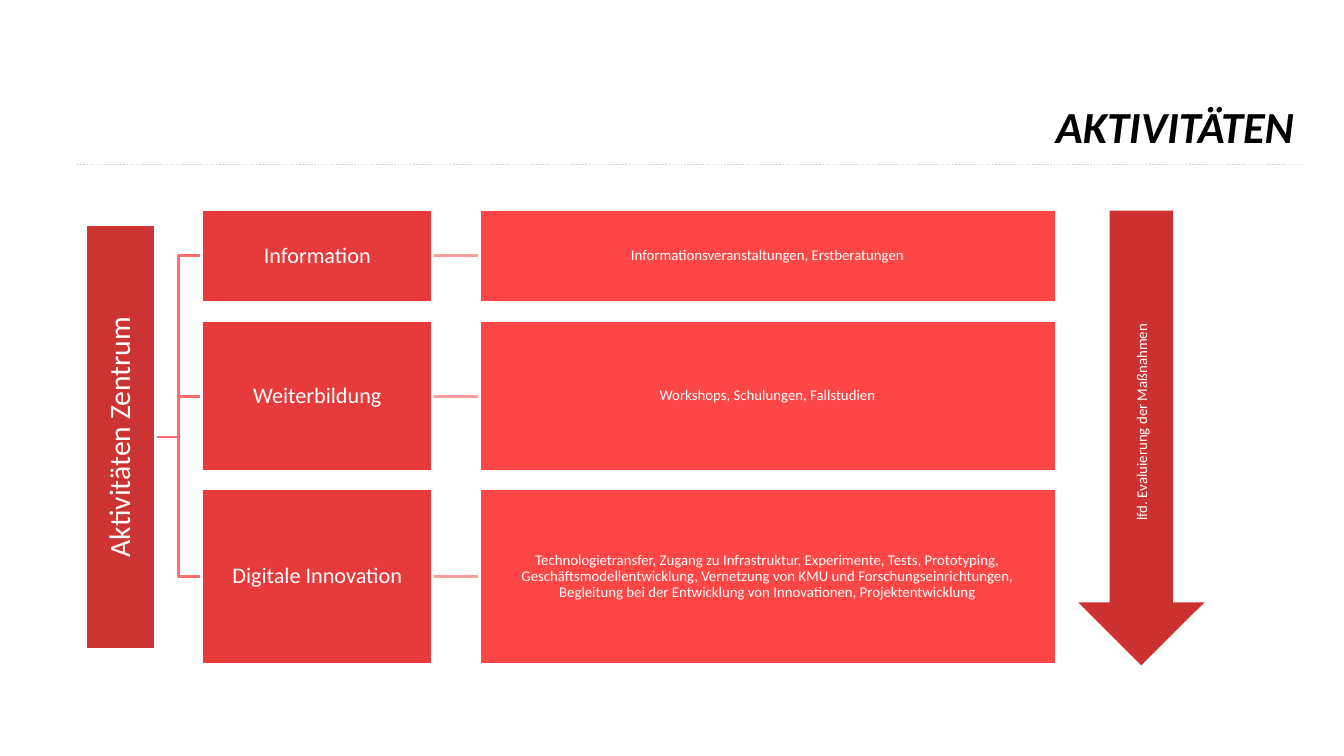
from lxml import etree
from pptx import Presentation
from pptx.dml.color import RGBColor
from pptx.enum.dml import MSO_LINE
from pptx.enum.shapes import MSO_CONNECTOR, MSO_SHAPE
from pptx.enum.text import MSO_ANCHOR, MSO_AUTO_SIZE, PP_ALIGN
from pptx.oxml.ns import qn
from pptx.util import Inches, Pt

RECT, DOWN_ARROW = MSO_SHAPE.RECTANGLE, MSO_SHAPE.DOWN_ARROW
STRAIGHT, ELBOW = MSO_CONNECTOR.STRAIGHT, MSO_CONNECTOR.ELBOW
LEFT_SIDE, RIGHT_SIDE = 1, 3

BLACK = RGBColor(0x00, 0x00, 0x00)
WHITE = RGBColor(0xFF, 0xFF, 0xFF)
RULE_GREY = RGBColor(0xD2, 0xD2, 0xD2)
ROOT_RED = RGBColor(0xCC, 0x33, 0x33)
TOPIC_RED = RGBColor(0xE7, 0x3A, 0x3A)
DETAIL_RED = RGBColor(0xFF, 0x46, 0x46)
ARROW_RED = RGBColor(0xCB, 0x31, 0x31)
BRANCH_RED = RGBColor(0xFF, 0x6C, 0x6C)
LINK_RED = RGBColor(0xFF, 0x9D, 0x9D)

# Content
TITLE = "AKTIVITÄTEN"
ROOT = "Aktivitäten Zentrum"
ARROW = "lfd. Evaluierung der Maßnahmen"
ROWS = [  # topic, details, top, height
    ("Information", "Informationsveranstaltungen, Erstberatungen", 2.36, 1.04),
    ("Weiterbildung", "Workshops, Schulungen, Fallstudien", 3.61, 1.7),
    ("Digitale Innovation",
     "Technologietransfer, Zugang zu Infrastruktur, Experimente, Tests, "
     "Prototyping, Geschäftsmodellentwicklung, Vernetzung von KMU und "
     "Forschungseinrichtungen, Begleitung bei der Entwicklung von "
     "Innovationen, Projektentwicklung", 5.5, 1.98),
]

# Columns: left, width
ROOT_X, ROOT_W = 0.96, 0.79
TOPIC_X, TOPIC_W = 2.27, 2.6
DETAIL_X, DETAIL_W = 5.39, 6.49


def format_text(tf, text, size, color, align, margins, spacing=0.9):
    tf.text = text
    tf.word_wrap = True
    tf.margin_left = tf.margin_right = Inches(margins[0])
    tf.margin_top = tf.margin_bottom = Inches(margins[1])
    p = tf.paragraphs[0]
    p.alignment = align
    p.line_spacing = spacing
    font = p.runs[0].font
    font.name, font.size, font.color.rgb = "Calibri", Pt(size), color
    return font


def add_box(kind, box, fill, text, size, margins, vertical=False, outline=True,
            spacing=0.9):
    sp = s.shapes.add_shape(kind, *map(Inches, box))
    sp.shadow.inherit = False
    sp.fill.solid()
    sp.fill.fore_color.rgb = fill
    if outline:
        sp.line.color.rgb, sp.line.width = WHITE, Pt(2.25)
    else:
        sp.line.fill.background()
    tf = sp.text_frame
    tf.vertical_anchor = MSO_ANCHOR.MIDDLE
    format_text(tf, text, size, WHITE, PP_ALIGN.CENTER, margins, spacing)
    if vertical:
        sp.element.txBody.find(qn("a:bodyPr")).set("vert", "vert270")
    return sp


def add_line(kind, x1, y1, x2, y2, color, width):
    cn = s.shapes.add_connector(kind, *map(Inches, (x1, y1, x2, y2)))
    cn.line.color.rgb, cn.line.width = color, Pt(width)
    etree.SubElement(cn.element.spPr, qn("a:effectLst"))
    return cn


prs = Presentation()
prs.slide_width, prs.slide_height = Inches(15.12), Inches(8.51)
s = prs.slides.add_slide(prs.slide_layouts[5])

# Title and dotted rule
title = s.shapes.title
title.left, title.top, title.width, title.height = map(
    Inches, (2.83, 1, 11.73, 0.77))
tf = title.text_frame
font = format_text(tf, TITLE, 36, BLACK, PP_ALIGN.RIGHT, (0, 0))
font.bold = font.italic = True
tf.margin_bottom = Inches(0.05)
tf.vertical_anchor = MSO_ANCHOR.BOTTOM
tf.auto_size = MSO_AUTO_SIZE.NONE
rule = add_line(STRAIGHT, 0.87, 1.85, 14.66, 1.85, RULE_GREY, 1.25)
rule.line.dash_style = MSO_LINE.ROUND_DOT

# Connectors lie behind the boxes, whose white outlines trim their ends
root_y = 4.92
lines = []
for _, _, top, height in ROWS:
    y = top + height / 2
    branch = add_line(ELBOW, ROOT_X + ROOT_W, root_y, TOPIC_X, y,
                      BRANCH_RED, 2.25)
    link = add_line(STRAIGHT, TOPIC_X + TOPIC_W, y, DETAIL_X, y,
                    LINK_RED, 2.25)
    lines.append((branch, link))

# Tree boxes, joined to their connectors
root_h = 4.79
root = add_box(RECT, (ROOT_X, root_y - root_h / 2, ROOT_W, root_h), ROOT_RED,
               ROOT, 24, (0.02, 0.02), vertical=True)
for (name, details, top, height), (branch, link) in zip(ROWS, lines):
    topic = add_box(RECT, (TOPIC_X, top, TOPIC_W, height), TOPIC_RED,
                    name, 18, (0.01, 0.01))
    detail = add_box(RECT, (DETAIL_X, top, DETAIL_W, height), DETAIL_RED,
                     details, 12, (0.2, 0.01))
    branch.begin_connect(root, RIGHT_SIDE)
    branch.end_connect(topic, LEFT_SIDE)
    link.begin_connect(topic, RIGHT_SIDE)
    link.end_connect(detail, LEFT_SIDE)

# Evaluation arrow
add_box(DOWN_ARROW, (12.13, 2.37, 1.42, 5.12), ARROW_RED, ARROW, 12,
        (0.1, 0.05), vertical=True, outline=False, spacing=1.0)

prs.save("out.pptx")
